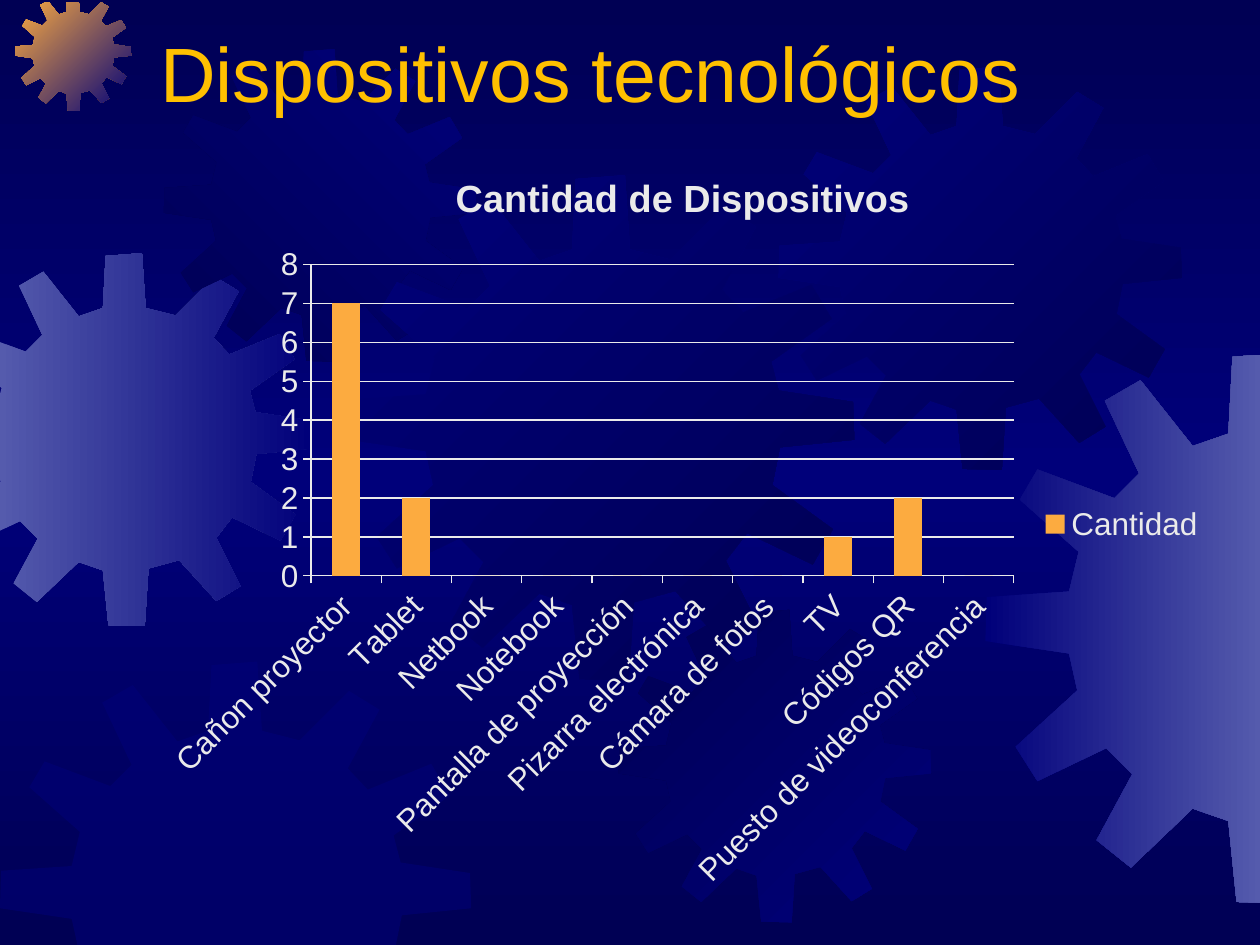
from copy import deepcopy

from pptx import Presentation
from pptx.chart.data import CategoryChartData
from pptx.dml.color import RGBColor
from pptx.enum.chart import XL_CHART_TYPE, XL_LEGEND_POSITION, XL_TICK_MARK
from pptx.enum.text import MSO_ANCHOR, PP_ALIGN
from pptx.oxml.ns import qn
from pptx.util import Inches, Pt

COLORS = {"navy": "000054", "blue": "00007A", "mist": "555BAD",
          "orange": "FCAB40", "gold": "FFC000", "pale": "EAEAEA"}

# Gear outline in a square of 401 units
UNITS = 401
TEETH = [
    (255, 67), (223, 59), (219, 0), (180, 3), (177, 59), (151, 68),
    (113, 20), (87, 35), (112, 88), (94, 106), (38, 85), (25, 107),
    (68, 145), (61, 174), (1, 178), (0, 210), (61, 219), (67, 246),
    (22, 287), (38, 312), (88, 288), (107, 307), (81, 355), (106, 375),
    (151, 332), (177, 341), (183, 400), (222, 401), (226, 339), (259, 330),
    (299, 374), (325, 358), (299, 306), (316, 284), (368, 309), (384, 281),
    (336, 246), (342, 216), (401, 210), (400, 180), (341, 171), (335, 148),
    (383, 114), (367, 87), (313, 109), (296, 91), (323, 41), (297, 25)]

# Limits that trim the gears: axis, value, side to keep
EDGES = [(0, -0.01, 1), (0, 10.01, -1), (1, 0.02, 1), (1, 7.54, -1)]

# Left, top, size, gradient colours, clockwise angle
GEARS = [
    (-0.49, 2.01, 2.96, ("mist", "blue"), 0),
    (0.12, -0.04, 0.92, ("orange", "blue"), 45),
    (1.3, 0.39, 2.48, ("navy", "blue"), 315),
    (2.77, 1.39, 4.01, ("blue", "navy"), 45),
    (0, 5.25, 3.74, ("blue",), 0),
    (4.91, 4.84, 2.48, ("navy", "blue"), 45),
    (6.18, 0.53, 3.2, ("blue", "navy"), 45),
    (7.82, 2.8, 4.37, ("blue", "mist"), 0)]

DEVICES = {"Cañon proyector": 7, "Tablet": 2, "Netbook": 0, "Notebook": 0,
           "Pantalla de proyección": 0, "Pizarra electrónica": 0,
           "Cámara de fotos": 0, "TV": 1, "Códigos QR": 2,
           "Puesto de videoconferencia": 0}


def rgb(name):
    return RGBColor.from_string(COLORS[name])


def trim(points, axis, limit, side):
    """Cut a polygon along one straight edge."""
    kept = []
    for a, b in zip(points, points[1:] + points[:1]):
        da, db = (side * (p[axis] - limit) for p in (a, b))
        if da >= 0:
            kept.append(a)
        if da * db < 0:
            t = da / (da - db)
            kept.append(tuple(m + t * (n - m) for m, n in zip(a, b)))
    return kept


class Deck:
    font = "Arial"

    def __init__(self):
        self.prs = Presentation()
        self.prs.slide_width, self.prs.slide_height = Inches(10), Inches(7.5)
        self.slide = self.prs.slides.add_slide(self.prs.slide_layouts[5])

    def style(self, font, size, color, bold=False):
        font.name, font.size, font.bold = self.font, Pt(size), bold
        font.color.rgb = rgb(color)

    def blend(self, fill, root, names, angle):
        """Fill with evenly spaced gradient stops."""
        fill.gradient()
        stops = next(root.iter(qn("a:gsLst")))
        while len(stops) < len(names):
            stops.append(deepcopy(stops[0]))
        for i, (stop, name) in enumerate(zip(fill.gradient_stops, names)):
            stop.position = i / (len(names) - 1)
            stop.color.rgb = rgb(name)
        fill.gradient_angle = (360 - angle) % 360

    def back(self, names, angle):
        self.blend(self.slide.background.fill, self.slide.element, names, angle)

    def gear(self, left, top, size, names, angle):
        scale = size / UNITS
        points = [(left + x * scale, top + y * scale) for x, y in TEETH]
        for edge in EDGES:
            points = trim(points, *edge)
        start, *rest = [(Inches(x), Inches(y)) for x, y in points]
        pen = self.slide.shapes.build_freeform(*start)
        pen.add_line_segments(rest, close=True)
        shape = pen.convert_to_shape()
        shape.shadow.inherit = False
        shape.line.fill.background()
        if len(names) > 1:
            self.blend(shape.fill, shape.element, names, angle)
            return
        shape.fill.solid()
        shape.fill.fore_color.rgb = rgb(names[0])
        color = next(shape.element.spPr.iter(qn("a:srgbClr")))
        alpha = color.makeelement(qn("a:alpha"), {"val": "50000"})
        color.append(alpha)

    def title(self, text, left, top, width, height):
        box = self.slide.shapes.title
        box.element.getparent().append(box.element)  # in front of the gears
        box.left, box.top = Inches(left), Inches(top)
        box.width, box.height = Inches(width), Inches(height)
        frame = box.text_frame
        frame.text = text
        frame.vertical_anchor = MSO_ANCHOR.BOTTOM
        line = frame.paragraphs[0]
        line.alignment = PP_ALIGN.LEFT
        self.style(line.font, 44, "gold")

    def chart(self, title, name, values, left, top, width, height):
        data = CategoryChartData()
        data.categories = list(values)
        data.add_series(name, list(values.values()))
        chart = self.slide.shapes.add_chart(
            XL_CHART_TYPE.COLUMN_CLUSTERED, Inches(left), Inches(top),
            Inches(width), Inches(height), data).chart
        self.style(chart.font, 18, "pale")
        chart.has_title = True
        chart.chart_title.include_in_layout = False
        head = chart.chart_title.text_frame
        head.text = title
        self.style(head.paragraphs[0].font, 21.6, "pale", True)
        chart.has_legend = True
        chart.legend.position = XL_LEGEND_POSITION.RIGHT
        chart.legend.include_in_layout = False
        plot = chart.plots[0]
        plot.gap_width, plot.vary_by_categories = 150, False
        bars = plot.series[0].format.fill
        bars.solid()
        bars.fore_color.rgb = rgb("orange")
        rows, cols = chart.value_axis, chart.category_axis
        rows.has_major_gridlines = True
        for axis in (rows, cols):
            axis.major_tick_mark = XL_TICK_MARK.OUTSIDE
            axis.minor_tick_mark = XL_TICK_MARK.NONE
            self.style(axis.tick_labels.font, 18, "pale")
        for part in (rows, cols, rows.major_gridlines):
            part.format.line.color.rgb = rgb("pale")
            part.format.line.width = Pt(0.75)


def main():
    deck = Deck()
    deck.back(("navy", "blue", "navy"), 90)
    for gear in GEARS:
        deck.gear(*gear)
    deck.title("Dispositivos tecnológicos", 1.17, 0.33, 8.5, 0.66)
    deck.chart("Cantidad de Dispositivos", "Cantidad", DEVICES,
               1.17, 1.15, 8.5, 6.02)
    deck.prs.save("out.pptx")


if __name__ == "__main__":
    main()
